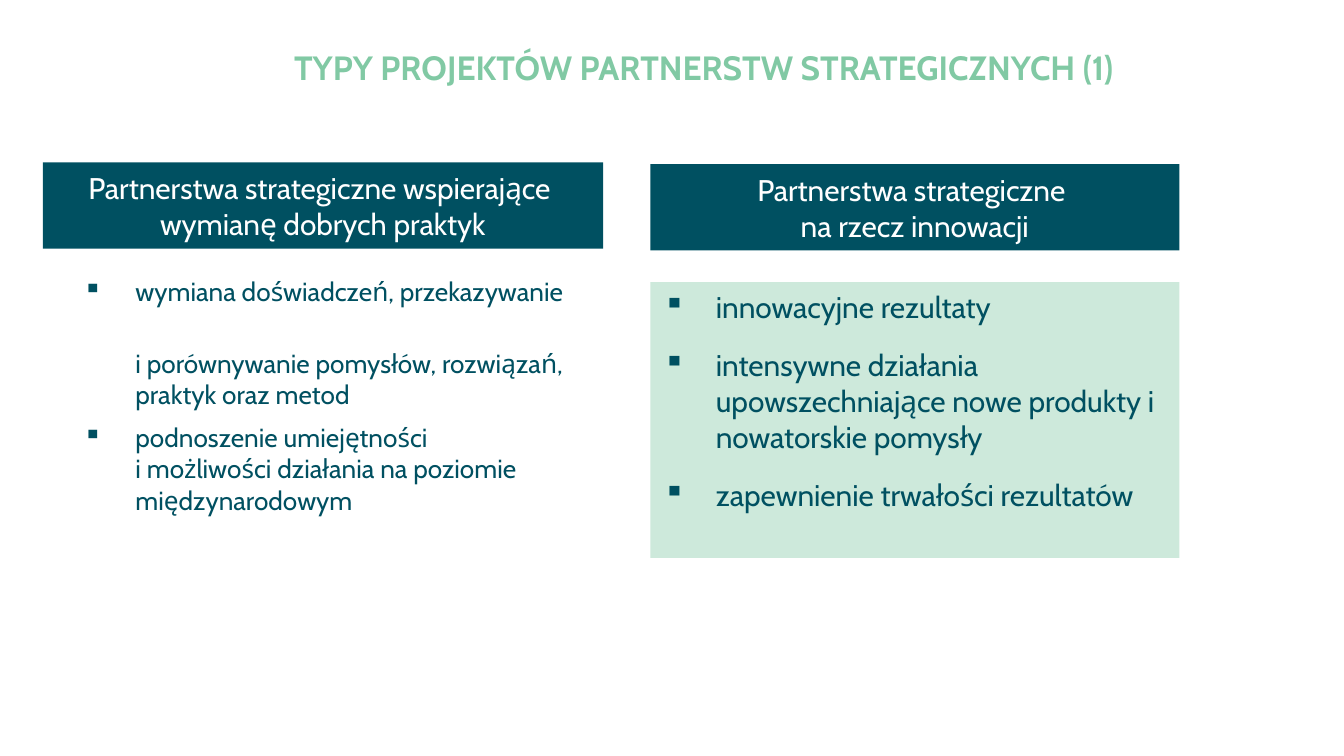
from lxml.etree import SubElement
from pptx import Presentation
from pptx.dml.color import RGBColor
from pptx.enum.shapes import MSO_SHAPE as Form
from pptx.enum.text import MSO_ANCHOR as Anchor, PP_ALIGN as Align
from pptx.oxml.ns import qn
from pptx.util import Cm, Pt

TEAL, MINT, GREEN, WHITE = "005061", "CDE9DB", "81C9A4", "FFFFFF"


def color(code):
    return RGBColor.from_string(code)


class Deck:
    font = "Cabin"
    indent = Cm(0.99)

    def __init__(self, width, height):
        self.prs = Presentation()
        self.prs.slide_width, self.prs.slide_height = Cm(width), Cm(height)
        self.slide = self.prs.slides.add_slide(self.prs.slide_layouts[6])

    def rect(self, place, fill=None, line=None):
        box = self.slide.shapes.add_shape(Form.RECTANGLE, *map(Cm, place))
        box.shadow.inherit = False
        if fill:
            box.fill.solid()
            box.fill.fore_color.rgb = color(fill)
        else:
            box.fill.background()
        if line:
            box.line.color.rgb = color(line)
            box.line.width = Pt(0.75)
        else:
            box.line.fill.background()
        return box

    def label(self, para, text, size, code, bold=False):
        for i, part in enumerate(text.split("\n")):
            if i:
                para.add_line_break()
            run = para.add_run()
            run.text = part
            run.font.name, run.font.size, run.font.bold = self.font, Pt(size), bold
            run.font.color.rgb = color(code)

    def title(self, text, place):
        frame = self.rect(place, line=WHITE).text_frame
        frame.vertical_anchor = Anchor.MIDDLE
        para = frame.paragraphs[0]
        para.alignment = Align.LEFT
        self.label(para, text, 18, GREEN, True)

    def header(self, lines, place):
        frame = self.rect(place, TEAL).text_frame
        frame.vertical_anchor = Anchor.MIDDLE
        for i, text in enumerate(lines):
            para = frame.add_paragraph() if i else frame.paragraphs[0]
            para.alignment = Align.CENTER
            self.label(para, text, 16, WHITE)

    def bullets(self, items, place, size, fill=None, before=0, after=0):
        if fill:
            box = self.rect(place, fill)
        else:
            box = self.slide.shapes.add_textbox(*map(Cm, place))
        frame = box.text_frame
        frame.word_wrap = True
        frame.vertical_anchor = Anchor.TOP
        for i, text in enumerate(items):
            para = frame.add_paragraph() if i else frame.paragraphs[0]
            para.alignment = Align.LEFT
            para.space_before = Pt(before if i else 0)
            para.space_after = Pt(after)
            props = para._p.get_or_add_pPr()
            props.set("marL", str(self.indent))
            props.set("indent", str(-self.indent))
            SubElement(props, qn("a:buChar"), char="▪")
            self.label(para, text, size, TEAL)


def main():
    deck = Deck(25.4, 14.28)
    deck.header(
        ["Partnerstwa strategiczne wspierające ", "wymianę dobrych praktyk"],
        (0.81, 3.07, 10.59, 1.63),
    )
    deck.header(
        ["Partnerstwa strategiczne \nna rzecz innowacji"],
        (12.29, 3.1, 10, 1.63),
    )
    deck.bullets(
        [
            "wymiana doświadczeń, przekazywanie \n"
            "i porównywanie pomysłów, rozwiązań, praktyk oraz metod",
            "podnoszenie umiejętności \n"
            "i możliwości działania na poziomie międzynarodowym",
        ],
        (1.32, 5.08, 9.6, 5.46), 14, after=6,
    )
    deck.bullets(
        [
            "innowacyjne rezultaty",
            "intensywne działania upowszechniające nowe produkty i nowatorskie pomysły",
            "zapewnienie trwałości rezultatów",
        ],
        (12.29, 5.33, 10, 5.21), 16, MINT, before=12,
    )
    deck.title("TYPY PROJEKTÓW PARTNERSTW STRATEGICZNYCH (1)", (5.31, 0.74, 19.2, 1.04))
    deck.prs.save("out.pptx")


if __name__ == "__main__":
    main()
